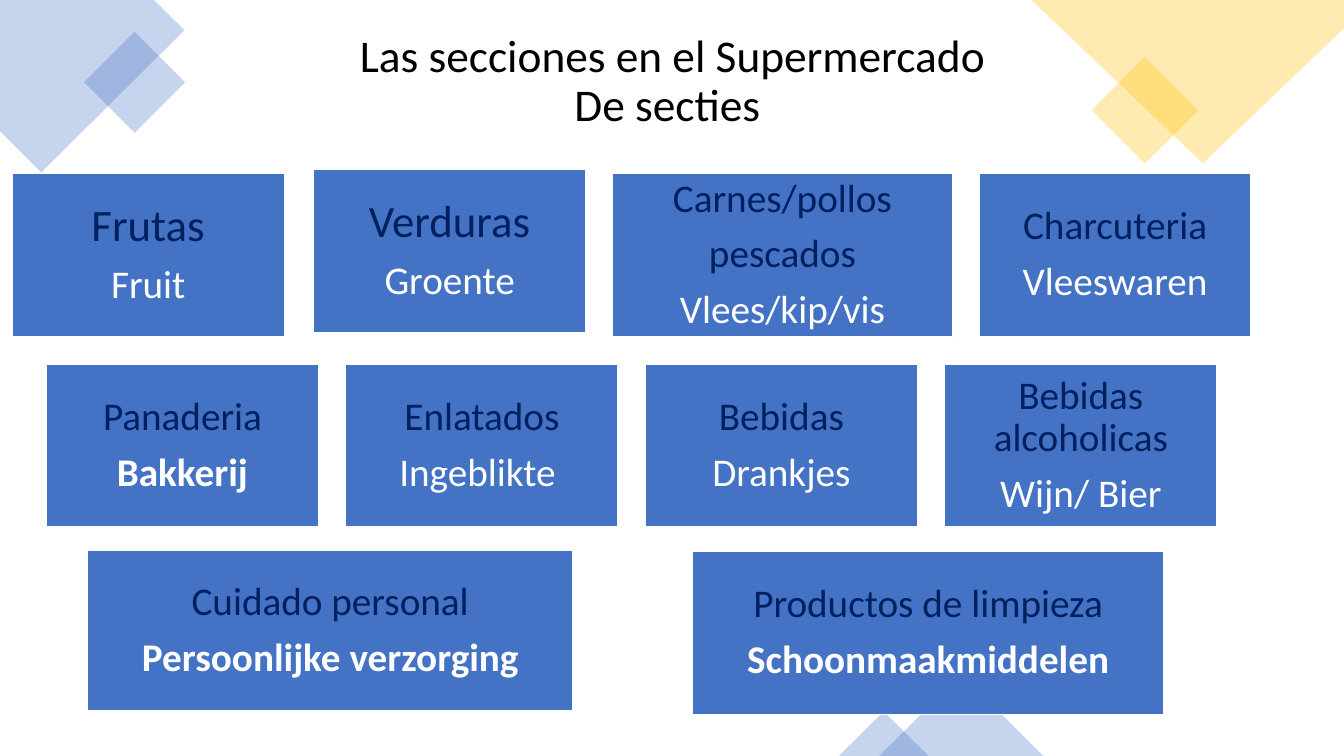
from dataclasses import dataclass

from lxml.etree import SubElement
from pptx import Presentation
from pptx.dml.color import RGBColor as Rgb
from pptx.enum.shapes import MSO_SHAPE as Kind
from pptx.enum.text import MSO_ANCHOR as Anchor, MSO_AUTO_SIZE as Fit, PP_ALIGN as Align
from pptx.oxml.ns import qn
from pptx.shapes.autoshape import Shape
from pptx.slide import Slide
from pptx.util import Pt

SCALE = 9144


@dataclass(frozen=True)
class Theme:
    font: str = "Calibri"
    blue: str = "4472C4"
    gold: str = "FFC000"
    navy: str = "002060"
    white: str = "FFFFFF"
    black: str = "000000"
    title: float = 32.4
    large: float = 32
    base: float = 28
    gap: float = 9.5
    lead: float = 0.9
    alpha: int = 30


@dataclass(frozen=True)
class Tile:
    x: int
    y: int
    w: int
    h: int
    names: str
    dutch: str
    bold: bool = False
    large: bool = False


@dataclass(frozen=True)
class Decor:
    kind: Kind
    x: int
    y: int
    w: int
    h: int
    fill: str
    turn: int = 0


@dataclass(frozen=True)
class Corner:
    points: tuple[tuple[int, int], ...]
    fill: str


THEME = Theme()

CORNERS = [
    Corner(((153, 0), (0, 0), (0, 130), (41, 171), (183, 30)), THEME.blue),
    Corner(((1333, 0), (1023, 0), (1193, 162), (1333, 28)), THEME.gold),
]

DECOR = [
    Decor(Kind.RECTANGLE, 98, 46, 71, 71, THEME.blue, 315),
    Decor(Kind.RECTANGLE, 1098, 72, 75, 75, THEME.gold, 315),
    Decor(Kind.ISOSCELES_TRIANGLE, 872, 669, 163, 81, THEME.blue),
    Decor(Kind.ISOSCELES_TRIANGLE, 832, 706, 89, 44, THEME.blue),
]

MIDDLE = [
    ("Panaderia", "Bakkerij", True),
    ("Enlatados", "Ingeblikte ", False),
    ("Bebidas", "Drankjes", False),
    ("Bebidas alcoholicas", "Wijn/ Bier", False),
]

TILES = [
    Tile(12, 172, 270, 162, "Frutas", "Fruit", large=True),
    Tile(311, 168, 270, 162, "Verduras", "Groente", large=True),
    Tile(607, 172, 338, 162, "Carnes/pollos\npescados", "Vlees/kip/vis"),
    Tile(971, 172, 270, 162, "Charcuteria", "Vleeswaren"),
    *(Tile(46 + 297 * i, 361, 270, 162, *row) for i, row in enumerate(MIDDLE)),
    Tile(87, 546, 481, 159, "Cuidado personal", "Persoonlijke verzorging", True),
    Tile(687, 547, 467, 162, "Productos de limpieza", "Schoonmaakmiddelen", True),
]


def px(size: int) -> int:
    return size * SCALE


def tint(shape: Shape, fill: str) -> None:
    shape.shadow.inherit = False
    shape.fill.solid()
    shape.fill.fore_color.rgb = Rgb.from_string(fill)
    shape.line.fill.background()
    color = shape.fill._xPr.find(qn("a:solidFill"))[0]
    SubElement(color, qn("a:alpha"), val=str(THEME.alpha * 1000))


def add_corner(slide: Slide, corner: Corner) -> None:
    first, *rest = corner.points
    path = slide.shapes.build_freeform(*first, scale=SCALE)
    path.add_line_segments(rest, close=True)
    tint(path.convert_to_shape(), corner.fill)


def add_decor(slide: Slide, item: Decor) -> None:
    shape = slide.shapes.add_shape(
        item.kind, px(item.x), px(item.y), px(item.w), px(item.h))
    shape.rotation = item.turn
    tint(shape, item.fill)


def set_title(slide: Slide) -> None:
    title = slide.shapes.title
    title.left, title.top, title.width, title.height = map(px, (92, 40, 1150, 114))
    frame = title.text_frame
    frame.text = "Las secciones en el Supermercado\vDe secties "
    frame.auto_size = Fit.NONE
    frame.word_wrap = True
    frame.vertical_anchor = Anchor.MIDDLE
    frame.margin_top, frame.margin_bottom = 0, px(30)
    line = frame.paragraphs[0]
    line.alignment = Align.CENTER
    line.line_spacing = THEME.lead
    for run in line.runs:
        run.font.name = THEME.font
        run.font.size = Pt(THEME.title)
        run.font.color.rgb = Rgb.from_string(THEME.black)


def add_tile(slide: Slide, tile: Tile) -> None:
    shape = slide.shapes.add_shape(
        Kind.RECTANGLE, px(tile.x), px(tile.y), px(tile.w), px(tile.h))
    shape.shadow.inherit = False
    shape.fill.solid()
    shape.fill.fore_color.rgb = Rgb.from_string(THEME.blue)
    shape.line.color.rgb = Rgb.from_string(THEME.white)
    shape.line.width = Pt(1)
    frame = shape.text_frame
    frame.word_wrap = True
    frame.vertical_anchor = Anchor.MIDDLE
    frame.margin_left = frame.margin_right = px(12)
    frame.margin_top = frame.margin_bottom = px(12)
    frame.text = f"{tile.names}\n{tile.dutch}"
    last = len(frame.paragraphs) - 1
    for i, line in enumerate(frame.paragraphs):
        line.alignment = Align.CENTER
        line.line_spacing = THEME.lead
        if i:
            line.space_before = Pt(THEME.gap)
        font = line.runs[0].font
        font.name = THEME.font
        font.size = Pt(THEME.large if tile.large and i < last else THEME.base)
        font.bold = tile.bold and i == last
        font.color.rgb = Rgb.from_string(THEME.white if i == last else THEME.navy)


def main() -> None:
    deck = Presentation()
    deck.slide_width, deck.slide_height = px(1333), px(750)
    slide = deck.slides.add_slide(deck.slide_layouts[5])
    for corner in CORNERS:
        add_corner(slide, corner)
    for item in DECOR:
        add_decor(slide, item)
    set_title(slide)
    for tile in TILES:
        add_tile(slide, tile)
    deck.save("out.pptx")


if __name__ == "__main__":
    main()
